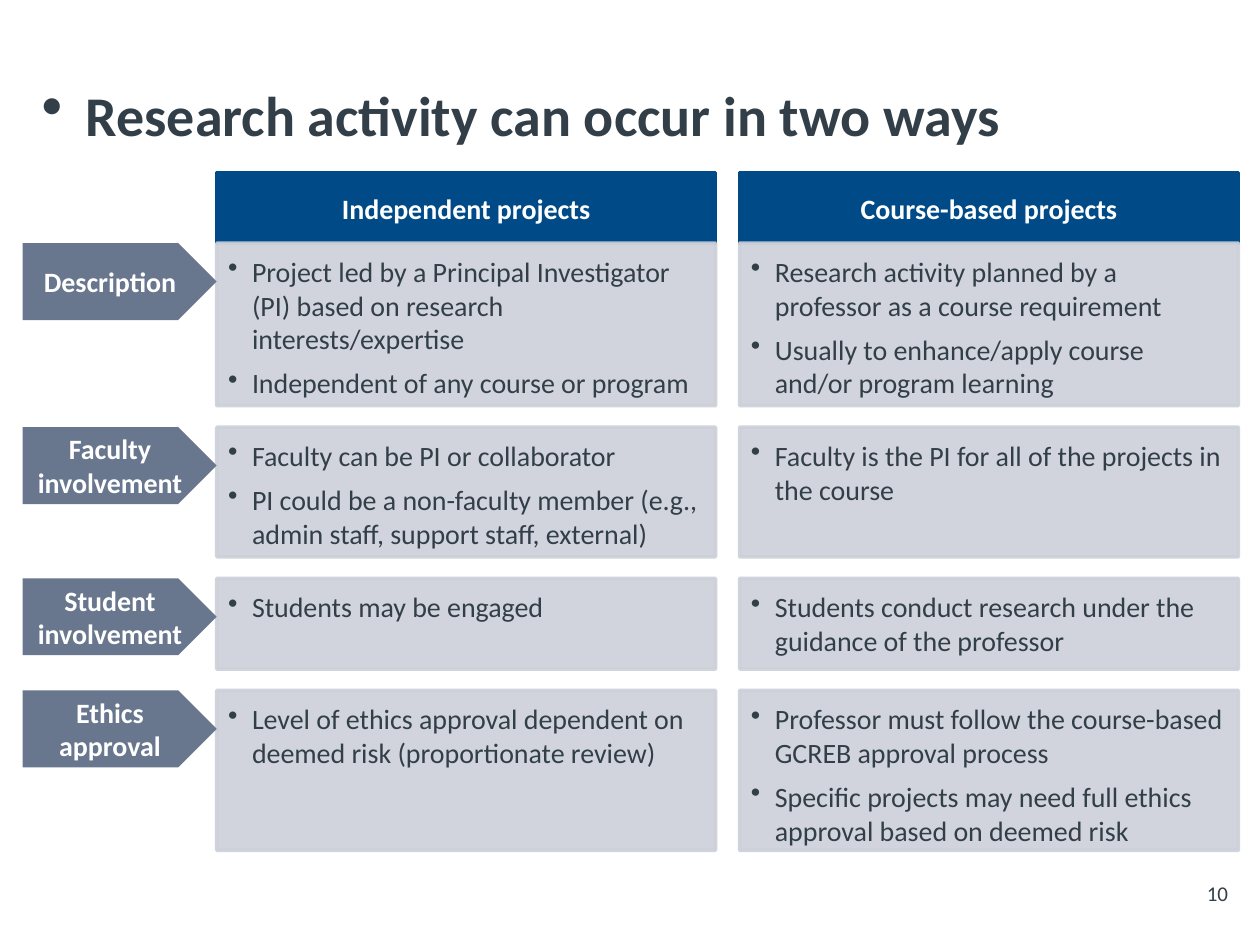
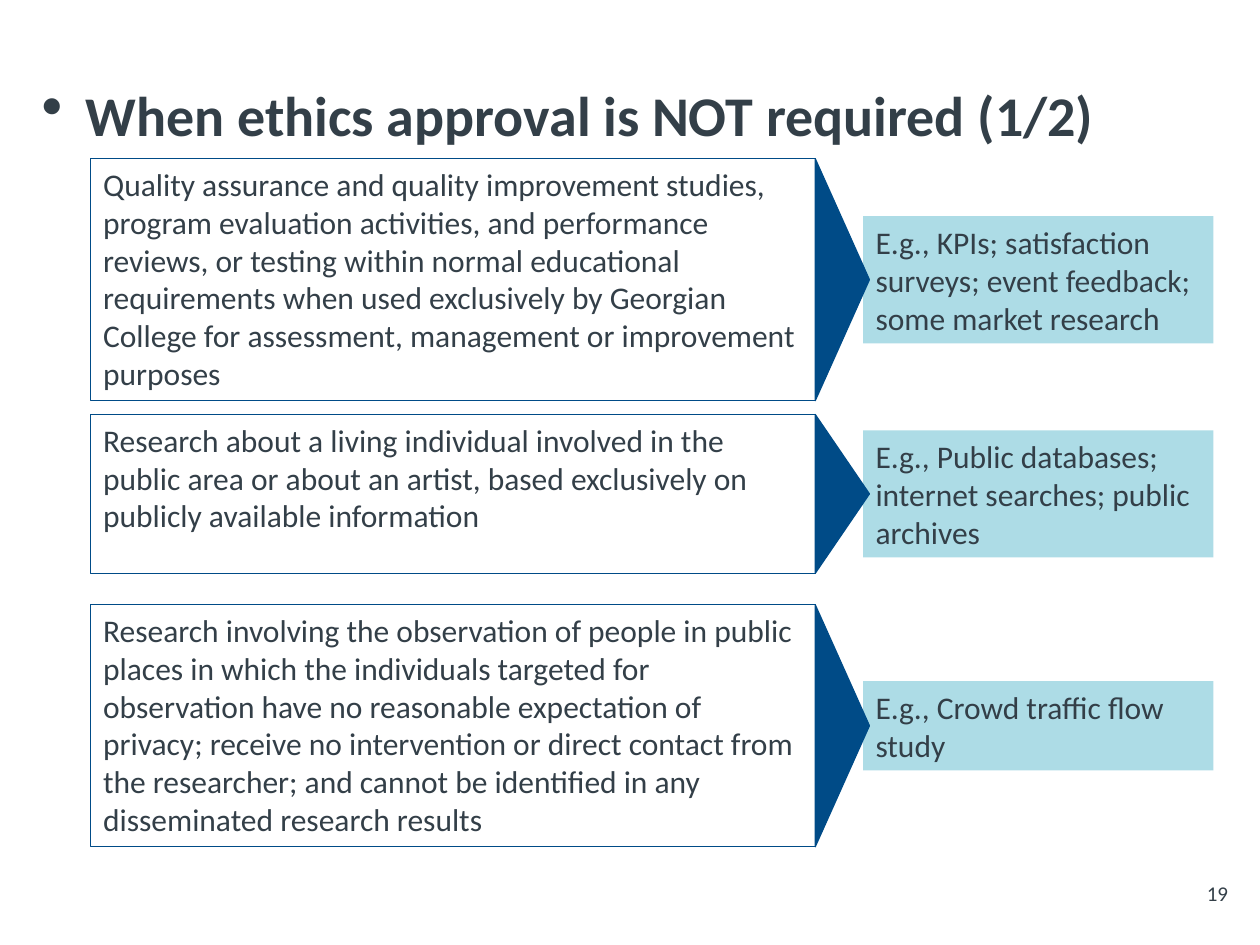
from pptx import Presentation
from pptx.dml.color import RGBColor
from pptx.enum import shapes, text
from pptx.oxml import ns, xmlchemy
from pptx.util import Inches, Pt

FONT = "Calibri"
INK, WHITE, NAVY = "333F48", "FFFFFF", "004B87"
SLATE, GREY, AQUA = "68768E", "CCD0D9", "ADDCE6"
PANEL_OPACITY = 90
DEFAULT_INSETS = (0.1, 0.05, 0.1, 0.05)
PANEL_INSETS = (0.09, 0.09, 0.12, 0.14)

LABEL_LEFT, LABEL_WIDTH, LABEL_HEIGHT = 0.18, 1.54, 0.61
COLUMN_LEFT, COLUMN_WIDTH, COLUMN_GAP = 1.72, 3.96, 0.19
HEADER_TOP, HEADER_HEIGHT, ROW_GAP = 1.37, 0.56, 0.17

COLUMNS = ["Independent projects", "Course-based projects"]
ROWS = [
    ("Description", 1.29,
     ["Project led by a Principal Investigator (PI) based on research interests/expertise",
      "Independent of any course or program"],
     ["Research activity planned by a professor as a course requirement",
      "Usually to enhance/apply course and/or program learning"]),
    ("Faculty involvement", 1.03,
     ["Faculty can be PI or collaborator",
      "PI could be a non-faculty member (e.g., admin staff, support staff, external)"],
     ["Faculty is the PI for all of the projects in the course"]),
    ("Student involvement", 0.72,
     ["Students may be engaged"],
     ["Students conduct research under the guidance of the professor"]),
    ("Ethics approval", 1.27,
     ["Level of ethics approval dependent on deemed risk (proportionate review)"],
     ["Professor must follow the course-based GCREB approval process",
      "Specific projects may need full ethics approval based on deemed risk"]),
]

EXEMPTIONS = [
    (1.26, 1.92, 1.01,
     "Quality assurance and quality improvement studies, program evaluation activities, "
     "and performance reviews, or testing within normal educational requirements when "
     "used exclusively by Georgian College for assessment, management or improvement purposes",
     "E.g., KPIs; satisfaction surveys; event feedback; some market research"),
    (3.29, 1.26, 1.01,
     "Research about a living individual involved in the public area or about an artist, "
     "based exclusively on publicly available information",
     "E.g., Public databases; internet searches; public archives"),
    (4.8, 1.92, 0.71,
     "Research involving the observation of people in public places in which the "
     "individuals targeted for observation have no reasonable expectation of privacy; "
     "receive no intervention or direct contact from the researcher; and cannot be "
     "identified in any disseminated research results",
     "E.g., Crowd traffic flow study"),
]


def color(hex_string):
    return RGBColor.from_string(hex_string)


def add_bullet(paragraph, indent, percent=100):
    properties = paragraph._p.get_or_add_pPr()
    properties.set("marL", str(Inches(indent)))
    properties.set("indent", str(-Inches(indent)))
    size = xmlchemy.OxmlElement("a:buSzPct")
    size.set("val", str(percent * 1000))
    bullet = xmlchemy.OxmlElement("a:buChar")
    bullet.set("char", "•")
    properties.extend([size, bullet])


def set_opacity(fill_parent, percent):
    for value in fill_parent.iter(ns.qn("a:srgbClr")):
        alpha = xmlchemy.OxmlElement("a:alpha")
        alpha.set("val", str(percent * 1000))
        value.append(alpha)


def write(shape, lines, size, hex_color=INK, bold=False, centred=False, middle=False,
          insets=DEFAULT_INSETS, indent=0, bullet_percent=100, space_after=0, wrap=True):
    frame = shape.text_frame
    frame.word_wrap = wrap
    frame.vertical_anchor = text.MSO_ANCHOR.MIDDLE if middle else text.MSO_ANCHOR.TOP
    (frame.margin_left, frame.margin_top,
     frame.margin_right, frame.margin_bottom) = map(Inches, insets)
    for index, line in enumerate(lines):
        paragraph = frame.add_paragraph() if index else frame.paragraphs[0]
        paragraph.alignment = text.PP_ALIGN.CENTER if centred else text.PP_ALIGN.LEFT
        paragraph.space_after = Pt(space_after)
        if indent:
            add_bullet(paragraph, indent, bullet_percent)
        run = paragraph.add_run()
        run.text = line
        run.font.name, run.font.size, run.font.bold = FONT, Pt(size), bold
        run.font.color.rgb = color(hex_color)


def add_box(slide, kind, box, fill=None, line=None, line_width=0.75):
    shape = slide.shapes.add_shape(kind, *map(Inches, box))
    shape.shadow.inherit = False
    if fill:
        shape.fill.solid()
        shape.fill.fore_color.rgb = color(fill)
    else:
        shape.fill.background()
    if line:
        shape.line.color.rgb = color(line)
        shape.line.width = Pt(line_width)
    else:
        shape.line.fill.background()
    return shape


def add_base_slide(presentation, title, number):
    slide = presentation.slides.add_slide(presentation.slide_layouts[6])
    title_box = slide.shapes.add_textbox(*map(Inches, (0.33, 0.64, 8.99, 0.61)))
    write(title_box, [title], 32, bold=True, insets=(0, 0, 0, 0), indent=0.35,
          bullet_percent=110)
    number_box = slide.shapes.add_textbox(*map(Inches, (9.48, 6.94, 0.4, 0.3)))
    write(number_box, [str(number)], 12, wrap=False)
    return slide


def add_header(slide, box, label):
    header = add_box(slide, shapes.MSO_SHAPE.RECTANGLE, box, NAVY, NAVY, 2)
    write(header, [label], 16, WHITE, bold=True, centred=True, middle=True,
          insets=(0.12, 0.07, 0.12, 0.07))


def add_panel(slide, box, points):
    panel = add_box(slide, shapes.MSO_SHAPE.RECTANGLE, box, GREY, GREY, 2)
    set_opacity(panel._element.spPr, PANEL_OPACITY)
    write(panel, points, 16, insets=PANEL_INSETS, indent=0.19, space_after=6)


def add_row(slide, top, height, label, cells):
    for index, points in enumerate(cells):
        add_panel(slide, (column_left(index), top, COLUMN_WIDTH, height), points)
    pentagon = add_box(slide, shapes.MSO_SHAPE.PENTAGON,
                       (LABEL_LEFT, top, LABEL_WIDTH, LABEL_HEIGHT), SLATE)
    write(pentagon, [label], 16, WHITE, bold=True, centred=True, middle=True)


def column_left(index):
    return COLUMN_LEFT + index * (COLUMN_WIDTH + COLUMN_GAP)


def add_comparison_slide(presentation):
    slide = add_base_slide(presentation, "Research activity can occur in two ways", 10)
    for index, label in enumerate(COLUMNS):
        add_header(slide, (column_left(index), HEADER_TOP, COLUMN_WIDTH, HEADER_HEIGHT), label)
    top = HEADER_TOP + HEADER_HEIGHT
    for label, height, *cells in ROWS:
        add_row(slide, top, height, label, cells)
        top += height + ROW_GAP


def add_exemption(slide, box, example_height, statement, example):
    left, top, width, height = box
    middle = top + height / 2
    arrow_depth = 0.43
    example_box = add_box(slide, shapes.MSO_SHAPE.RECTANGLE,
                          (left + width + 0.38, middle - example_height / 2,
                           2.78, example_height), AQUA)
    write(example_box, [example], 18, middle=True)
    statement_box = add_box(slide, shapes.MSO_SHAPE.RECTANGLE, box, line=NAVY)
    write(statement_box, [statement], 18)
    arrow_centre = left + width + arrow_depth / 2
    arrow = add_box(slide, shapes.MSO_SHAPE.ISOSCELES_TRIANGLE,
                    (arrow_centre - height / 2, middle - arrow_depth / 2,
                     height, arrow_depth), NAVY, NAVY)
    arrow.rotation = 90


def add_exemptions_slide(presentation):
    slide = add_base_slide(presentation, "When ethics approval is NOT required (1/2)", 19)
    for top, height, example_height, statement, example in EXEMPTIONS:
        add_exemption(slide, (0.72, top, 5.75, height), example_height, statement, example)


def main():
    presentation = Presentation()
    presentation.slide_width, presentation.slide_height = Inches(10), Inches(7.5)
    add_comparison_slide(presentation)
    add_exemptions_slide(presentation)
    presentation.save("out.pptx")


if __name__ == "__main__":
    main()
